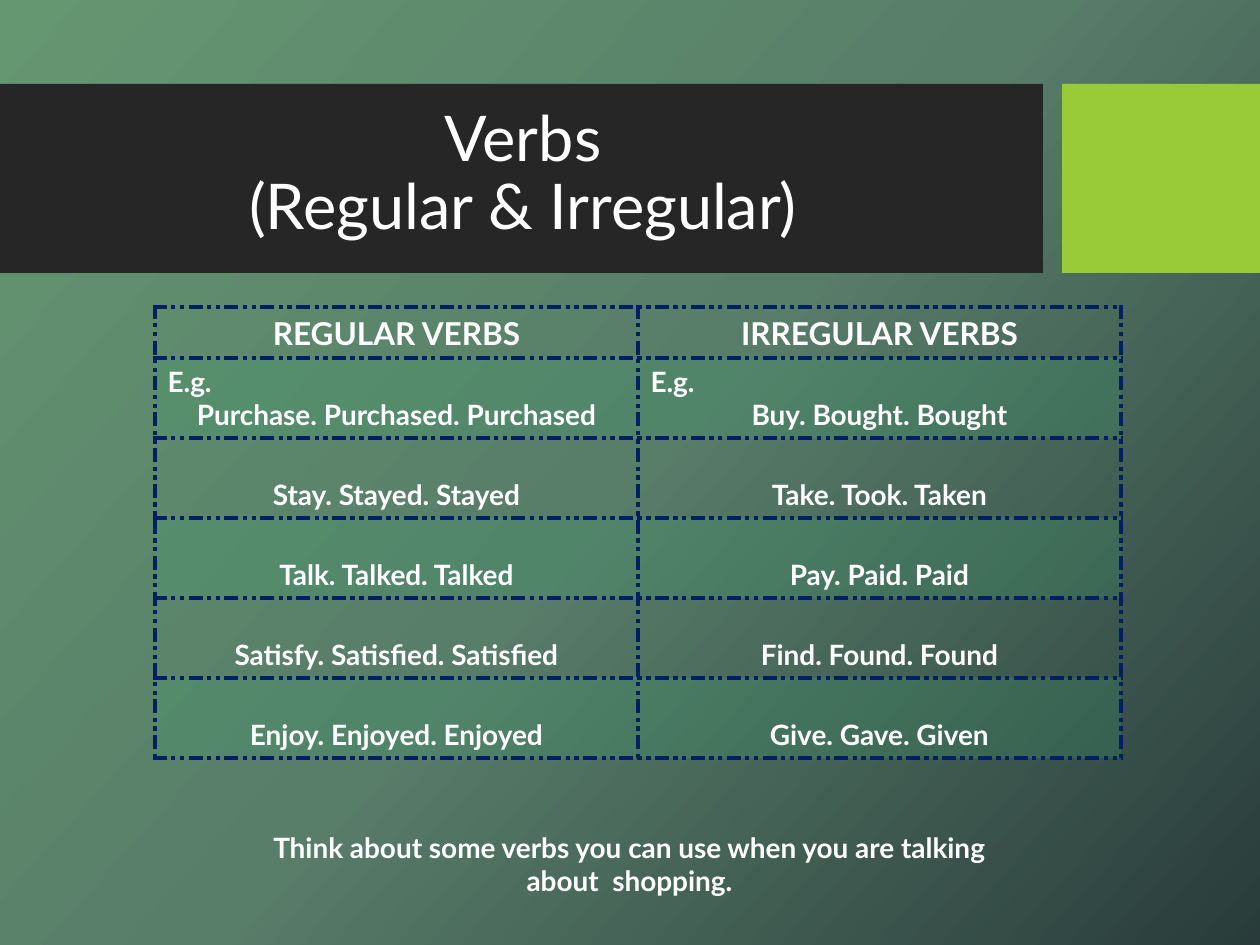
from copy import deepcopy

from lxml.etree import SubElement
from pptx import Presentation
from pptx.dml.color import RGBColor
from pptx.enum.shapes import MSO_SHAPE as Shape
from pptx.enum.text import MSO_ANCHOR as Anchor, PP_ALIGN as Align
from pptx.oxml import parse_xml
from pptx.oxml.ns import nsdecls, qn
from pptx.util import Pt

WHITE = RGBColor(0xFF, 0xFF, 0xFF)
DARK = RGBColor(0x26, 0x26, 0x26)
LIME = RGBColor(0x99, 0xCB, 0x38)
GREEN = RGBColor(0x37, 0xA7, 0x6F)
NAVY = RGBColor(0x00, 0x20, 0x60)
BACK = [
    (0, RGBColor(0x65, 0x97, 0x71)),
    (50, RGBColor(0x58, 0x7D, 0x69)),
    (100, RGBColor(0x29, 0x3C, 0x3B)),
]
SCALE = 914400 / 126  # EMU in one px

HEADS = ["REGULAR VERBS", "IRREGULAR VERBS"]
VERBS = [
    ("E.g.\nPurchase. Purchased. Purchased", "E.g.\nBuy. Bought. Bought"),
    ("Stay. Stayed. Stayed", "Take. Took. Taken"),
    ("Talk. Talked. Talked", "Pay. Paid. Paid"),
    ("Satisfy. Satisfied. Satisfied", "Find. Found. Found"),
    ("Enjoy. Enjoyed. Enjoyed", "Give. Gave. Given"),
]


def emu(*px):
    return [round(n * SCALE) for n in px]


class Page:
    font = "Lato"

    def __init__(self, deck):
        self.slide = deck.slides.add_slide(deck.slide_layouts[6])

    def backdrop(self, stops, angle):
        fill = self.slide.background.fill
        fill.gradient()
        fill.gradient_angle = angle
        first = next(self.slide.element.iter(qn("a:gs")))
        first.addnext(deepcopy(first))
        for stop, (pos, color) in zip(fill.gradient_stops, stops):
            stop.position = pos / 100
            stop.color.rgb = color

    def block(self, box, color):
        shape = self.slide.shapes.add_shape(Shape.RECTANGLE, *emu(*box))
        shape.shadow.inherit = False
        shape.fill.solid()
        shape.fill.fore_color.rgb = color
        shape.line.fill.background()

    def style(self, frame, text, size, bold):
        frame.word_wrap = True
        frame.text = text
        for para in frame.paragraphs:
            para.alignment = Align.LEFT if para.text == "E.g." else Align.CENTER
            para.font.name = self.font
            para.font.size = Pt(size)
            para.font.bold = bold
            para.font.color.rgb = WHITE

    def text(self, box, text, size, bold=False, anchor=Anchor.TOP, space=1.0):
        frame = self.slide.shapes.add_textbox(*emu(*box)).text_frame
        self.style(frame, text, size, bold)
        frame.vertical_anchor = anchor
        for para in frame.paragraphs:
            para.line_spacing = space

    def cell(self, cell, text, size, tint):
        self.style(cell.text_frame, text, size, True)
        cell.vertical_anchor = Anchor.BOTTOM
        props = cell._tc.get_or_add_tcPr()
        if tint:
            cell.fill.solid()
            cell.fill.fore_color.rgb = GREEN
            color = next(props.iter(qn("a:srgbClr")))
            SubElement(color, qn("a:alpha"), val="20000")
        else:
            cell.fill.background()
        # Borders come before the fill
        for spot, side in enumerate("LRTB"):
            props.insert(spot, parse_xml(
                f'<a:ln{side} {nsdecls("a")} w="38100"><a:solidFill>'
                f'<a:srgbClr val="{NAVY}"/></a:solidFill>'
                f'<a:prstDash val="sysDashDotDot"/></a:ln{side}>'))

    def table(self, box, rows, head, step):
        shape = self.slide.shapes.add_table(len(rows), len(rows[0]), *emu(*box))
        grid = shape.table
        grid.first_row = grid.horz_banding = False
        for r, row in enumerate(rows):
            grid.rows[r].height = emu(step if r else head)[0]
            for c, text in enumerate(row):
                self.cell(grid.cell(r, c), text, 16 if r else 18, r % 2 == 1)


def main():
    deck = Presentation()
    deck.slide_width, deck.slide_height = emu(1260, 945)
    page = Page(deck)
    page.backdrop(BACK, 360 - 42)

    # Title band
    page.block((0, 84, 1043, 189), DARK)
    page.block((1062, 84, 198, 189), LIME)
    page.text((0, 101, 1046, 149), "Verbs\v(Regular & Irregular)", 36,
              anchor=Anchor.MIDDLE, space=0.9)

    # Closing prompt
    page.text((31, 824, 1197, 81),
              "Think about some verbs you can use when you are talking\n"
              "about  shopping.", 16, bold=True)

    # Verb table
    page.table((155, 307, 966, 451), [HEADS, *VERBS], 51, 80)
    deck.save("out.pptx")


if __name__ == "__main__":
    main()
